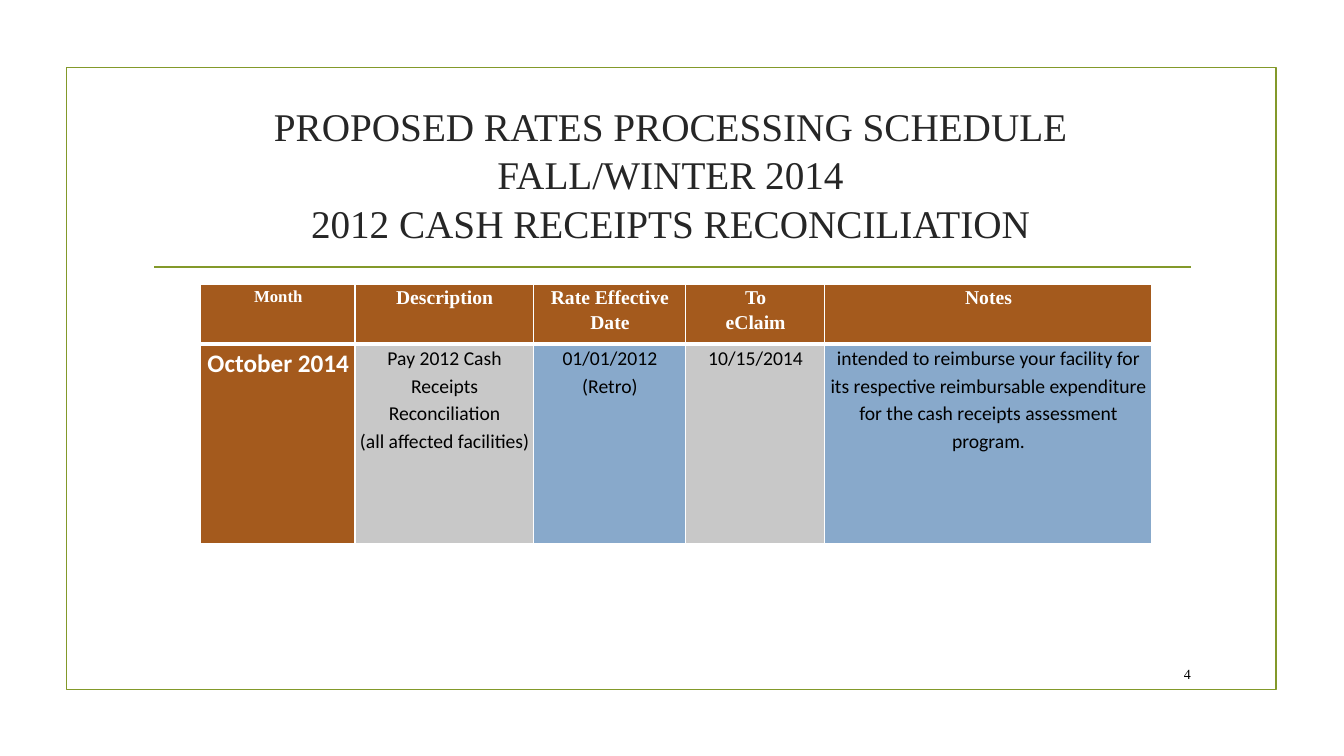
from lxml.etree import SubElement
from pptx import Presentation
from pptx.dml.color import RGBColor
from pptx.enum.shapes import MSO_CONNECTOR, MSO_SHAPE
from pptx.enum.text import MSO_ANCHOR, PP_ALIGN
from pptx.oxml.ns import qn
from pptx.util import Inches, Pt

COLORS = {"green": "83992A", "title": "262626", "rust": "A45A1D",
          "gray": "C8C8C8", "blue": "88A9CB", "white": "FFFFFF", "black": "000000"}
SERIF, SANS = "Times New Roman", "Calibri"

TITLE = ("PROPOSED RATES PROCESSING SCHEDULE FALL/WINTER 2014\v"
         "2012 CASH RECEIPTS RECONCILIATION")
PAGE = "4"
HEADERS = [["Month"], ["Description"], ["Rate Effective Date"], ["To", "eClaim"], ["Notes"]]
ENTRIES = [
    ["October 2014"],
    ["Pay 2012 Cash Receipts Reconciliation", "(all affected facilities)"],
    ["01/01/2012", "(Retro)"],
    ["10/15/2014"],
    ["intended to reimburse your facility for its respective reimbursable "
     "expenditure for the cash receipts assessment program."],
]
ENTRY_FILLS = ["rust", "gray", "blue", "gray", "blue"]
COL_WIDTHS = [1.53, 1.77, 1.51, 1.38, 3.24]
ROW_HEIGHTS = [0.59, 1.98]


def rgb(name):
    return RGBColor.from_string(COLORS[name])


def write(tf, lines, align, color, spacing=None, **font):
    for i, line in enumerate(lines):
        p = tf.paragraphs[0] if i == 0 else tf.add_paragraph()
        p.text = line
        p.alignment = align
        p.line_spacing = spacing
        for r in p.runs:
            for key, value in font.items():
                setattr(r.font, key, value)
            r.font.color.rgb = rgb(color)


def add_text(slide, box, lines, align, color, **fmt):
    tf = slide.shapes.add_textbox(*map(Inches, box)).text_frame
    tf.word_wrap = True
    tf.vertical_anchor = MSO_ANCHOR.MIDDLE
    write(tf, lines, align, color, **fmt)


def set_borders(cell, widths):
    """Draw white cell borders; must run before the cell gets its fill."""
    tc_pr = cell._tc.get_or_add_tcPr()
    for side, width in widths.items():
        ln = SubElement(tc_pr, qn(f"a:ln{side}"), w=str(Pt(width)))
        SubElement(SubElement(ln, qn("a:solidFill")), qn("a:srgbClr"), val=COLORS["white"])


def fill_cell(cell, lines, fill, bottom, **fmt):
    set_borders(cell, {"L": 1, "R": 1, "T": 1, "B": bottom})
    cell.fill.solid()
    cell.fill.fore_color.rgb = rgb(fill)
    for side in ("left", "right", "top", "bottom"):
        setattr(cell, f"margin_{side}", 0)
    write(cell.text_frame, lines, PP_ALIGN.CENTER, spacing=1.15, **fmt)
    for p in cell.text_frame.paragraphs:
        p._p.get_or_add_pPr().set("marL", str(Inches(0.01)))


def add_frame(slide):
    sp = slide.shapes.add_shape(MSO_SHAPE.RECTANGLE, *map(Inches, (0.66, 0.67, 12, 6.17)))
    sp.shadow.inherit = False
    sp.fill.background()
    rule = slide.shapes.add_connector(MSO_CONNECTOR.STRAIGHT,
                                      *map(Inches, (1.53, 2.65, 11.81, 2.65)))
    SubElement(rule._element.spPr, qn("a:effectLst"))
    for s in (sp, rule):
        s.line.color.rgb = rgb("green")
        s.line.width = Pt(1.25)


def add_schedule(slide):
    box = (1.99, 2.82, sum(COL_WIDTHS), sum(ROW_HEIGHTS))
    table = slide.shapes.add_table(2, len(COL_WIDTHS), *map(Inches, box)).table
    for row, height in zip(table.rows, ROW_HEIGHTS):
        row.height = Inches(height)
    for i, width in enumerate(COL_WIDTHS):
        table.columns[i].width = Inches(width)
        first = i == 0
        fill_cell(table.cell(0, i), HEADERS[i], "rust", bottom=3, color="white",
                  name=SERIF, size=Pt(12 if first else 14), bold=True)
        fill_cell(table.cell(1, i), ENTRIES[i], ENTRY_FILLS[i], bottom=1,
                  color="white" if first else "black",
                  name=SANS, size=Pt(18 if first else 14), bold=first)


def main():
    prs = Presentation()
    prs.slide_width, prs.slide_height = Inches(13.33), Inches(7.5)
    slide = prs.slides.add_slide(prs.slide_layouts[6])
    add_frame(slide)
    add_text(slide, (1.4, 0.88, 10.5, 1.68), [TITLE], PP_ALIGN.CENTER, "title",
             spacing=1.04, name=SERIF, size=Pt(28))
    add_schedule(slide)
    add_text(slide, (11.32, 6.53, 0.59, 0.31), [PAGE], PP_ALIGN.RIGHT, "black",
             name=SERIF, size=Pt(10))
    prs.save("out.pptx")


if __name__ == "__main__":
    main()
